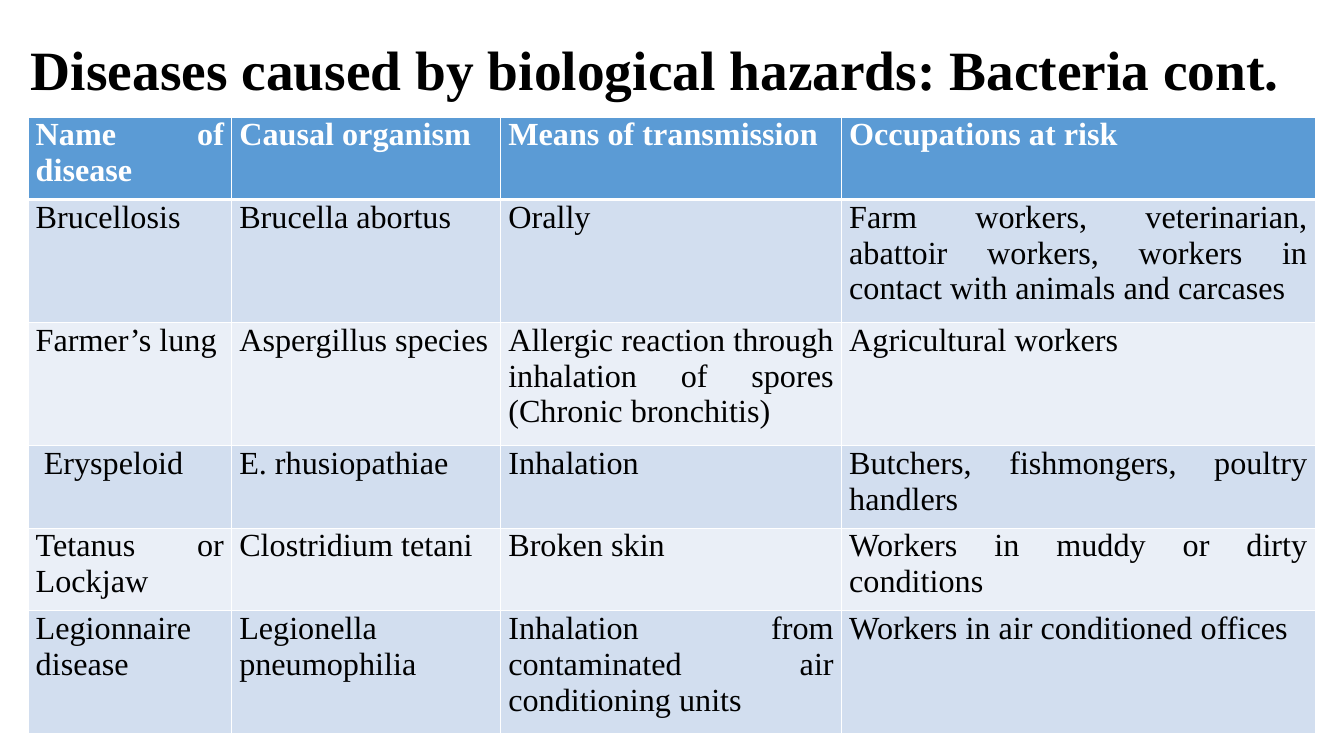
from lxml import etree
from pptx import Presentation
from pptx.dml.color import RGBColor
from pptx.enum.text import MSO_ANCHOR, PP_ALIGN
from pptx.oxml.ns import qn
from pptx.util import Cm, Pt

JUSTIFY = PP_ALIGN.JUSTIFY
MIDDLE = MSO_ANCHOR.MIDDLE
FONT = "Times New Roman"
BLACK = RGBColor(0x00, 0x00, 0x00)
WHITE = RGBColor(0xFF, 0xFF, 0xFF)
HEADER_BLUE = RGBColor(0x5B, 0x9B, 0xD5)
BAND_DARK = RGBColor(0xD2, 0xDE, 0xEF)
BAND_LIGHT = RGBColor(0xEA, 0xEF, 0xF7)

TITLE = "Diseases caused by biological hazards: Bacteria cont."
TITLE_BOX = (Cm(0.53), Cm(1.02), Cm(32.74), Cm(1.63))
TABLE_BOX = (Cm(0.71), Cm(2.95), Cm(32.44), Cm(15.54))
COLUMN_WIDTHS = (5.13, 6.78, 8.59, 11.94)
ROW_HEIGHTS = (2.08, 3.1, 3.1, 2.08, 2.08, 3.1)
DISEASES = (
    ("Name of disease", "Causal organism", "Means of transmission",
     "Occupations at risk"),
    ("Brucellosis", "Brucella abortus", "Orally",
     "Farm workers, veterinarian, abattoir workers, workers in contact "
     "with animals and carcases"),
    ("Farmer’s lung", "Aspergillus species",
     "Allergic reaction through inhalation of spores (Chronic bronchitis)",
     "Agricultural workers"),
    (" Eryspeloid", "E. rhusiopathiae", "Inhalation",
     "Butchers, fishmongers, poultry handlers"),
    ("Tetanus or Lockjaw", "Clostridium tetani", "Broken skin",
     "Workers in muddy or dirty conditions"),
    ("Legionnaire disease", "Legionella pneumophilia",
     "Inhalation from contaminated air conditioning units",
     "Workers in air conditioned offices"),
)


def style_font(font, size, color, bold):
    font.name = FONT
    font.size = Pt(size)
    font.color.rgb = color
    font.bold = bold


def add_title(page, box):
    frame = page.shapes.add_textbox(*box).text_frame
    frame.word_wrap = True
    frame.vertical_anchor = MIDDLE
    para = frame.paragraphs[0]
    para.text = TITLE
    para.line_spacing = 0.9
    style_font(para.font, 39.6, BLACK, True)


def set_borders(cell, top, bottom):
    """Draw white cell borders; widths are in points, 1 at the sides."""
    properties = cell._tc.get_or_add_tcPr()
    sides = (("a:lnL", 1), ("a:lnR", 1), ("a:lnT", top), ("a:lnB", bottom))
    for position, (tag, width) in enumerate(sides):
        line = etree.Element(qn(tag), w=str(Pt(width)))
        fill = etree.SubElement(line, qn("a:solidFill"))
        etree.SubElement(fill, qn("a:srgbClr"), val=str(WHITE))
        properties.insert(position, line)


def fill_cell(cell, text, row_number):
    header = row_number == 0
    cell.margin_left = cell.margin_right = Cm(0.19)
    cell.margin_top = cell.margin_bottom = 0
    cell.fill.solid()
    band = BAND_DARK if row_number % 2 else BAND_LIGHT
    cell.fill.fore_color.rgb = HEADER_BLUE if header else band
    set_borders(cell, top=3 if row_number == 1 else 1, bottom=3 if header else 1)
    para = cell.text_frame.paragraphs[0]
    para.text = text
    para.alignment = JUSTIFY
    style_font(para.font, 23, WHITE if header else BLACK, header)


def add_disease_table(page, box):
    table = page.shapes.add_table(len(DISEASES), len(COLUMN_WIDTHS), *box).table
    for column, width in zip(table.columns, COLUMN_WIDTHS):
        column.width = Cm(width)
    for row_number, texts in enumerate(DISEASES):
        row = table.rows[row_number]
        row.height = Cm(ROW_HEIGHTS[row_number])
        for cell, text in zip(row.cells, texts):
            fill_cell(cell, text, row_number)


def main():
    deck = Presentation()
    deck.slide_width, deck.slide_height = Cm(33.87), Cm(19.05)
    page = deck.slides.add_slide(deck.slide_layouts[6])
    add_title(page, TITLE_BOX)
    add_disease_table(page, TABLE_BOX)
    deck.save("out.pptx")


if __name__ == "__main__":
    main()
